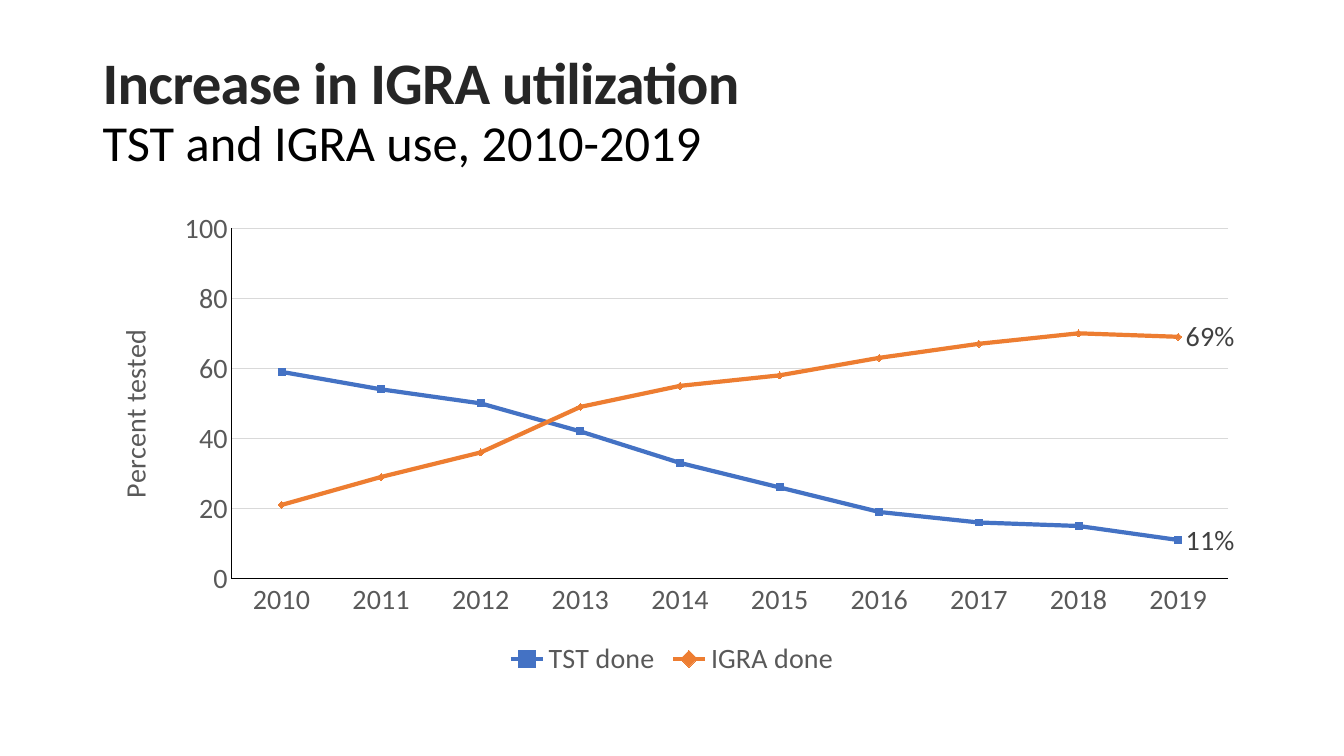
from dataclasses import dataclass

from lxml.etree import SubElement
from pptx import Presentation
from pptx.chart.data import CategoryChartData
from pptx.dml.color import RGBColor as RGB
from pptx.enum.chart import XL_CHART_TYPE as ChartType
from pptx.enum.chart import XL_LABEL_POSITION as LabelPos
from pptx.enum.chart import XL_LEGEND_POSITION as LegendPos
from pptx.enum.chart import XL_TICK_MARK as Tick
from pptx.enum.text import MSO_ANCHOR as Anchor
from pptx.oxml.ns import qn
from pptx.util import Inches, Pt


@dataclass(frozen=True)
class Theme:
    font: str = "Calibri"
    heading: str = "262626"
    black: str = "000000"
    muted: str = "595959"
    label: str = "404040"
    grid: str = "D9D9D9"
    heading_size: float = 42
    subheading_size: float = 36
    chart_size: float = 20
    thin: float = 0.75
    thick: float = 3


THEME = Theme()
WIDTH, HEIGHT = Inches(13.33), Inches(7.5)
MARGIN = 0.069
TITLE_BOX = (MARGIN, 0.053, 1 - 2 * MARGIN, 0.193)
CHART_BOX = (MARGIN, 0.267, 1 - 2 * MARGIN, 0.635)
PLOT_BOX = {"x": 0.12, "y": 0.055, "w": 0.86, "h": 0.73}
YEARS = [str(year) for year in range(2010, 2020)]
TESTS = [
    ("TST done", "4472C4", [59, 54, 50, 42, 33, 26, 19, 16, 15, 11]),
    ("IGRA done", "ED7D31", [21, 29, 36, 49, 55, 58, 63, 67, 70, 69]),
]


def place(box):
    x, y, w, h = box
    return int(x * WIDTH), int(y * HEIGHT), int(w * WIDTH), int(h * HEIGHT)


def style_font(font, size, color, bold=False):
    font.name = THEME.font
    font.size = Pt(size)
    font.bold = bold
    font.color.rgb = RGB.from_string(color)


def style_line(line, color, width):
    line.color.rgb = RGB.from_string(color)
    line.width = Pt(width)


def add_title(s, heading, subheading):
    tf = s.shapes.add_textbox(*place(TITLE_BOX)).text_frame
    tf.word_wrap = True
    tf.vertical_anchor = Anchor.MIDDLE
    p = tf.paragraphs[0]
    p.text = f"{heading}\v{subheading}"
    p.line_spacing = 0.9
    top, bottom = p.runs
    style_font(top.font, THEME.heading_size, THEME.heading, True)
    top.font._element.set("spc", "-50")
    style_font(bottom.font, THEME.subheading_size, THEME.black)


def style_axis(axis):
    axis.major_tick_mark = axis.minor_tick_mark = Tick.NONE
    style_font(axis.tick_labels.font, THEME.chart_size, THEME.muted)
    style_line(axis.format.line, THEME.black, THEME.thin)


def style_value_axis(axis, title):
    style_axis(axis)
    axis.minimum_scale, axis.maximum_scale, axis.major_unit = 0, 100, 20
    style_line(axis.major_gridlines.format.line, THEME.grid, THEME.thin)
    tf = axis.axis_title.text_frame
    tf.text = title
    style_font(tf.paragraphs[0].runs[0].font, THEME.chart_size, THEME.muted)


def style_series(series, color):
    series.smooth = False
    style_line(series.format.line, color, THEME.thick)
    series.marker.style = None
    last = len(YEARS) - 1
    label = series.points[last].data_label
    label.text_frame.text = f"{series.values[last]:.0f}%"
    run = label.text_frame.paragraphs[0].runs[0]
    style_font(run.font, THEME.chart_size, THEME.label)
    label.position = LabelPos.RIGHT


def fix_plot_area(chart):
    area = chart._chartSpace.chart.plotArea
    layout = area.find(qn("c:layout"))
    if layout is None:
        layout = SubElement(area, qn("c:layout"))
        area.insert(0, layout)
    manual = SubElement(layout, qn("c:manualLayout"))
    SubElement(manual, qn("c:layoutTarget")).set("val", "inner")
    for side in "xy":
        SubElement(manual, qn(f"c:{side}Mode")).set("val", "edge")
    for side, share in PLOT_BOX.items():
        SubElement(manual, qn(f"c:{side}")).set("val", str(share))


def add_line_chart(s):
    data = CategoryChartData()
    data.categories = YEARS
    for name, _, values in TESTS:
        data.add_series(name, values)
    chart = s.shapes.add_chart(ChartType.LINE, *place(CHART_BOX), data).chart
    chart.has_title = False
    style_font(chart.font, THEME.chart_size, THEME.muted)
    chart.plots[0].vary_by_categories = False
    style_axis(chart.category_axis)
    style_value_axis(chart.value_axis, "Percent tested")
    for series, (_, color, _) in zip(chart.plots[0].series, TESTS):
        style_series(series, color)
    chart.has_legend = True
    chart.legend.position = LegendPos.BOTTOM
    chart.legend.include_in_layout = False
    style_font(chart.legend.font, THEME.chart_size, THEME.muted)
    fix_plot_area(chart)


def main():
    prs = Presentation()
    prs.slide_width, prs.slide_height = WIDTH, HEIGHT
    s = prs.slides.add_slide(prs.slide_layouts[6])
    add_title(s, "Increase in IGRA utilization", "TST and IGRA use, 2010-2019")
    add_line_chart(s)
    prs.save("out.pptx")


if __name__ == "__main__":
    main()
